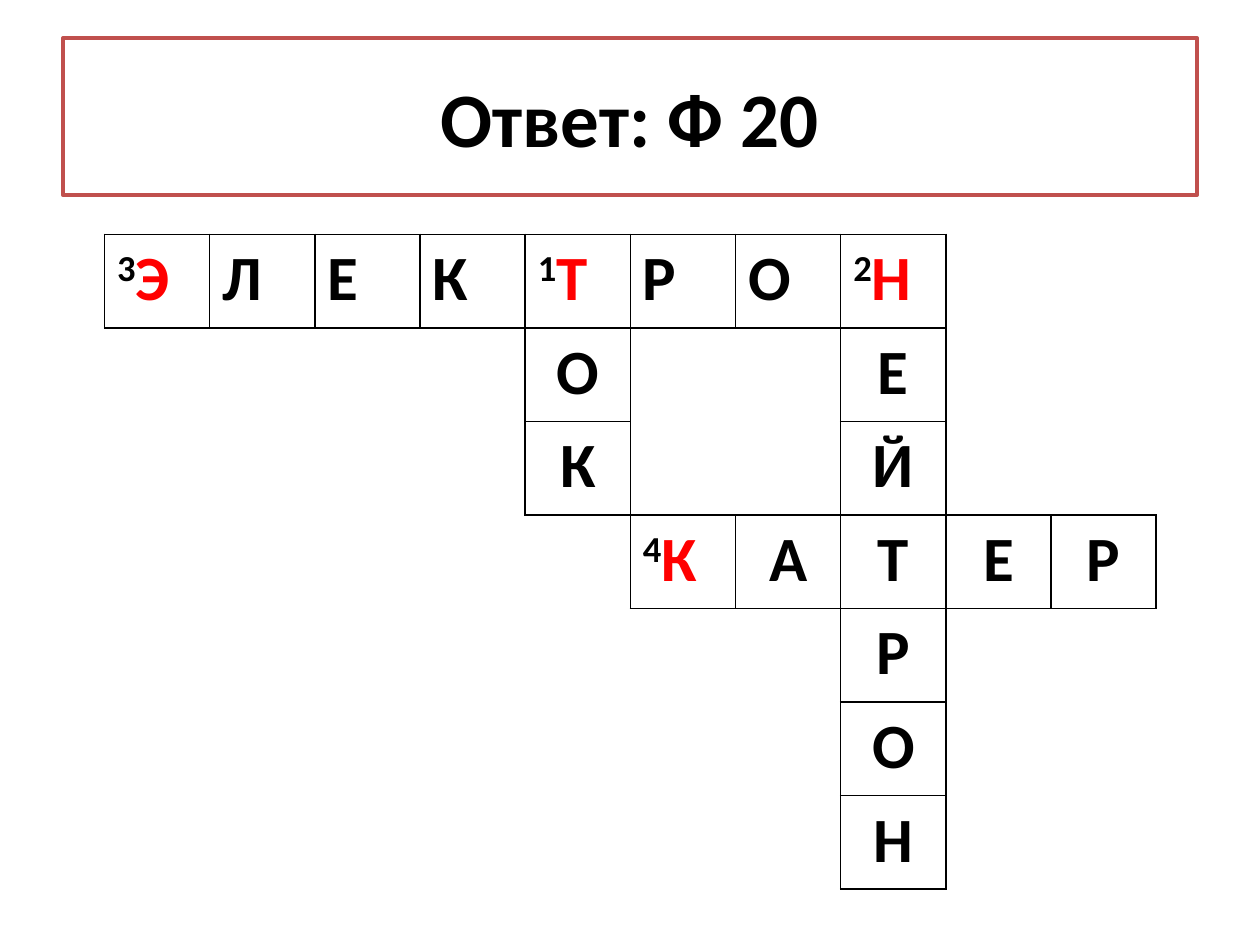
"""Build a slide with the solved crossword and its answer heading."""
from dataclasses import dataclass

from lxml.etree import SubElement
from pptx import Presentation
from pptx.dml.color import RGBColor
from pptx.enum.shapes import MSO_SHAPE as Shape
from pptx.enum.text import MSO_ANCHOR as Anchor, PP_ALIGN as Align
from pptx.oxml.ns import qn
from pptx.util import Inches, Pt

BLACK, RED, WHITE, BORDER = "000000", "FF0000", "FFFFFF", "C0504D"
ROWS, COLUMNS = 7, 10
SIDES = {"lnL": (0, -1), "lnR": (0, 1), "lnT": (-1, 0), "lnB": (1, 0)}


@dataclass(frozen=True)
class Word:
    number: int
    text: str
    row: int
    column: int
    down: bool = False

    def squares(self) -> dict:
        return {
            (self.row + i * self.down, self.column + i * (not self.down)): letter
            for i, letter in enumerate(self.text)
        }


WORDS = [
    Word(3, "ЭЛЕКТРОН", 0, 0),
    Word(1, "ТОК", 0, 4, down=True),
    Word(2, "НЕЙТРОН", 0, 7, down=True),
    Word(4, "КАТЕР", 3, 5),
]


def color(value: str) -> RGBColor:
    return RGBColor.from_string(value)


def add_span(para, text: str, size: int, fill: str = BLACK):
    span = para.add_run()
    span.text = text
    formats = {"name": "Calibri", "size": Pt(size), "bold": True}
    for name, value in formats.items():
        setattr(span.font, name, value)
    span.font.color.rgb = color(fill)
    return span


def draw_title(page, text: str) -> None:
    box = page.shapes.add_shape(
        Shape.RECTANGLE, Inches(0.5), Inches(0.3), Inches(9), Inches(1.25))
    box.shadow.inherit = False
    box.fill.solid()
    box.fill.fore_color.rgb = color(WHITE)
    box.line.color.rgb = color(BORDER)
    box.line.width = Pt(2)
    box.text_frame.vertical_anchor = Anchor.MIDDLE
    para = box.text_frame.paragraphs[0]
    para.alignment = Align.CENTER
    add_span(para, text, 44)


def set_borders(cell, row: int, column: int, letters: dict) -> None:
    properties = cell._tc.get_or_add_tcPr()
    for side, (down, right) in SIDES.items():
        line = SubElement(properties, qn(f"a:{side}"), w=str(Pt(1)))
        if (row, column) in letters or (row + down, column + right) in letters:
            solid = SubElement(line, qn("a:solidFill"))
            SubElement(solid, qn("a:srgbClr"), val=BLACK)
        else:
            SubElement(line, qn("a:noFill"))


def fill_square(cell, letter: str, number: int | None, centered: bool) -> None:
    para = cell.text_frame.paragraphs[0]
    para.alignment = Align.CENTER if centered else Align.LEFT
    if number:
        span = add_span(para, str(number), 36)
        span._r.get_or_add_rPr().set("baseline", "30000")
    add_span(para, letter, 36, RED if number else BLACK)


def draw_crossword(page, words: list[Word]) -> None:
    letters = {place: letter for word in words
               for place, letter in word.squares().items()}
    numbers = {(word.row, word.column): word.number for word in words}
    table = page.shapes.add_table(
        ROWS, COLUMNS, Inches(0.83), Inches(1.86), Inches(8.35), Inches(5.2)).table
    table.first_row = table.horz_banding = False
    for row in range(ROWS):
        for column in range(COLUMNS):
            place = row, column
            cell = table.cell(row, column)
            set_borders(cell, row, column, letters)
            cell.fill.background()
            if place in letters:
                number = numbers.get(place)
                fill_square(cell, letters[place], number, row > 0 and not number)


def main() -> None:
    deck = Presentation()
    deck.slide_width, deck.slide_height = Inches(10), Inches(7.5)
    page = deck.slides.add_slide(deck.slide_layouts[6])
    draw_title(page, "Ответ: Ф 20")
    draw_crossword(page, WORDS)
    deck.save("out.pptx")


if __name__ == "__main__":
    main()
